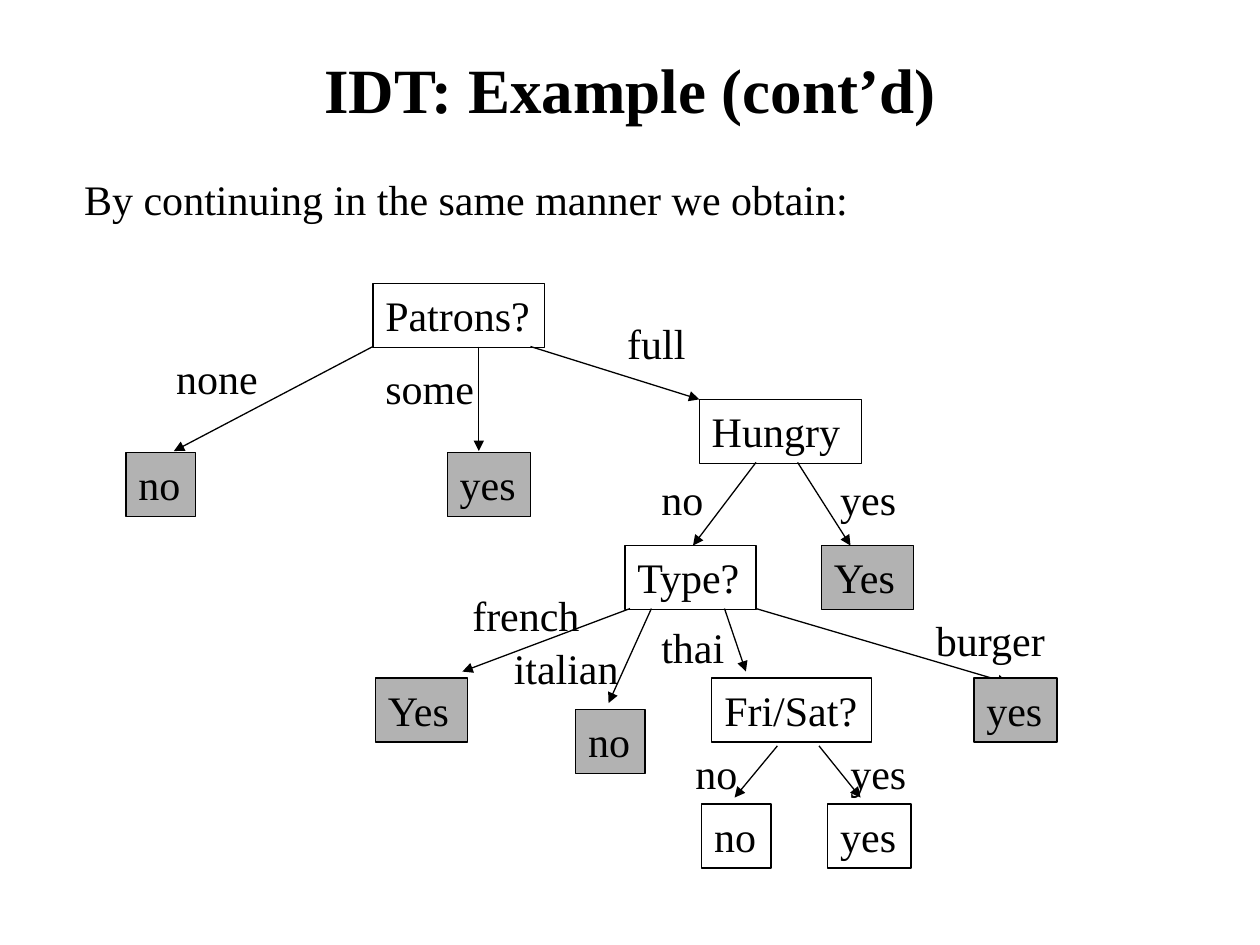
import pptx
import pptx.dml.color
import pptx.enum.shapes
import pptx.enum.text
import pptx.oxml
import pptx.oxml.ns
import pptx.util
from pptx.util import Inches

BLACK = pptx.dml.color.RGBColor(0x00, 0x00, 0x00)
GREY = pptx.dml.color.RGBColor(0xB2, 0xB2, 0xB2)
FONT = "Times New Roman"
LINE_WIDTH = pptx.util.Pt(0.75)
NODE_HEIGHT = 0.51
LABEL_HEIGHT = 0.5

# Nodes: text, left, top, width, is a grey leaf (inches inside the tree's box)
NODES = [
    ("Patrons?", 1.96, 0, 1.36, False),
    ("no", 0, 1.34, 0.55, True),
    ("yes", 2.55, 1.34, 0.66, True),
    ("Hungry", 4.55, 0.92, 1.29, False),
    ("Type?", 3.96, 2.08, 1.04, False),
    ("Yes", 5.52, 2.08, 0.73, True),
    ("Yes", 1.98, 3.13, 0.73, True),
    ("no", 3.57, 3.38, 0.55, True),
    ("Fri/Sat?", 4.65, 3.13, 1.27, False),
    ("yes", 6.73, 3.13, 0.66, True),
    ("no", 4.57, 4.13, 0.55, False),
    ("yes", 5.57, 4.13, 0.66, False),
]

# Branches: label, label left, top and width, arrow start, arrow end
BRANCHES = [
    ("none", 0.3, 0.5, 0.85, (1.96, 0.5), (0.38, 1.33)),
    ("some", 1.96, 0.58, 0.9, (2.8, 0.5), (2.8, 1.33)),
    ("full", 3.88, 0.22, 0.66, (3.21, 0.5), (4.55, 0.92)),
    ("no", 4.15, 1.46, 0.53, (5, 1.42), (4.5, 2.08)),
    ("yes", 5.57, 1.46, 0.65, (5.33, 1.42), (5.75, 2.08)),
    ("french", 2.65, 2.38, 1.05, (4, 2.58), (2.67, 3.08)),
    ("italian", 2.98, 2.8, 1.03, (4.17, 2.58), (3.83, 3.33)),
    ("thai", 4.15, 2.63, 0.7, (4.75, 2.58), (4.92, 3.08)),
    ("burger", 6.33, 2.58, 1.07, (5, 2.58), (7, 3.17)),
    ("no", 4.42, 3.63, 0.53, (5.17, 3.67), (4.83, 4.08)),
    ("yes", 5.65, 3.63, 0.65, (5.5, 3.67), (5.83, 4.08)),
]


def write_text(shape, text, size=24, bold=False, wrap=False,
               alignment=pptx.enum.text.PP_ALIGN.LEFT,
               anchor=pptx.enum.text.MSO_ANCHOR.TOP):
    frame = shape.text_frame
    frame.text = text
    frame.word_wrap = wrap
    frame.auto_size = pptx.enum.text.MSO_AUTO_SIZE.NONE
    frame.vertical_anchor = anchor
    paragraph = frame.paragraphs[0]
    paragraph.alignment = alignment
    paragraph.font.name = FONT
    paragraph.font.size = pptx.util.Pt(size)
    paragraph.font.bold = bold
    paragraph.font.color.rgb = BLACK


def add_title(slide, left, top, width, height):
    title = slide.shapes.title
    title.left, title.top = left, top
    title.width, title.height = width, height
    write_text(title, "IDT: Example (cont’d)", size=36, bold=True, wrap=True,
               alignment=pptx.enum.text.PP_ALIGN.CENTER,
               anchor=pptx.enum.text.MSO_ANCHOR.MIDDLE)


def add_introduction(slide, left, top, width, height):
    box = slide.shapes.add_textbox(left, top, width, height)
    write_text(box, "By continuing in the same manner we obtain:", wrap=True)


def add_arrow(slide, start_x, start_y, end_x, end_y):
    arrow = slide.shapes.add_connector(
        pptx.enum.shapes.MSO_CONNECTOR.STRAIGHT, start_x, start_y, end_x, end_y)
    arrow.line.color.rgb = BLACK
    arrow.line.width = LINE_WIDTH
    head = pptx.oxml.parse_xml(
        f'<a:tailEnd {pptx.oxml.ns.nsdecls("a")} type="triangle"/>')
    arrow.line._get_or_add_ln().append(head)
    properties = arrow._element.spPr
    properties.append(pptx.oxml.parse_xml(
        f'<a:effectLst {pptx.oxml.ns.nsdecls("a")}/>'))


def add_node(slide, text, left, top, width, is_leaf):
    node = slide.shapes.add_shape(
        pptx.enum.shapes.MSO_SHAPE.RECTANGLE, left, top, width, Inches(NODE_HEIGHT))
    node.shadow.inherit = False
    node.line.color.rgb = BLACK
    node.line.width = LINE_WIDTH
    if is_leaf:
        node.fill.solid()
        node.fill.fore_color.rgb = GREY
    else:
        node.fill.background()
    write_text(node, text)


def add_tree(slide, left, top):
    # Arrows lie behind the nodes
    for *_, start, end in BRANCHES:
        add_arrow(slide, left + Inches(start[0]), top + Inches(start[1]),
                  left + Inches(end[0]), top + Inches(end[1]))
    # Questions and answers
    for text, x, y, width, is_leaf in NODES:
        add_node(slide, text, left + Inches(x), top + Inches(y),
                 Inches(width), is_leaf)
    # Branch labels
    for text, x, y, width, *_ in BRANCHES:
        label = slide.shapes.add_textbox(left + Inches(x), top + Inches(y),
                                         Inches(width), Inches(LABEL_HEIGHT))
        write_text(label, text)


def main():
    presentation = pptx.Presentation()
    presentation.slide_width = Inches(10)
    presentation.slide_height = Inches(7.5)
    title_only = presentation.slide_layouts[5]
    slide = presentation.slides.add_slide(title_only)
    add_title(slide, Inches(0.75), Inches(0.08), Inches(8.5), Inches(1.25))
    add_introduction(slide, Inches(0.57), Inches(1.33), Inches(9.1), Inches(0.9))
    add_tree(slide, Inches(1), Inches(2.25))
    presentation.save("out.pptx")


if __name__ == "__main__":
    main()
